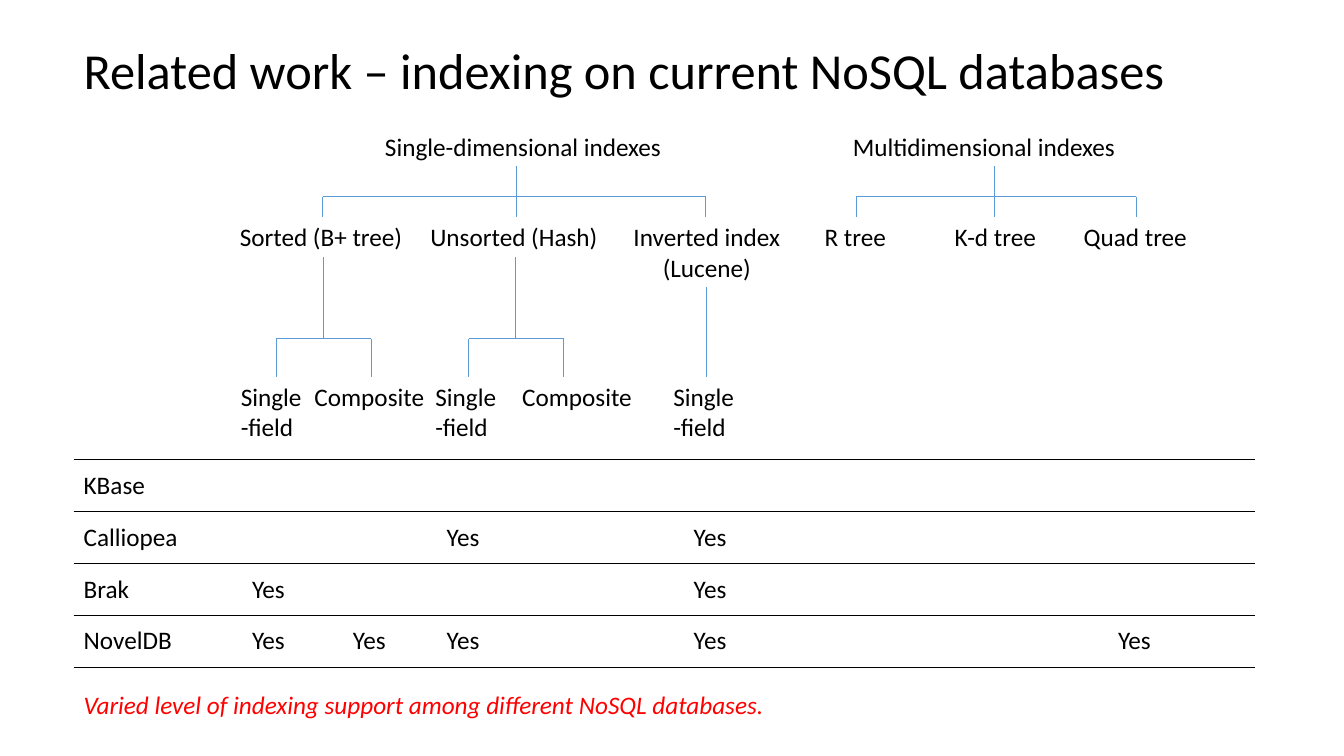
from lxml import etree
from pptx import Presentation
from pptx import util as u
from pptx.dml.color import RGBColor
from pptx.enum import shapes, text
from pptx.oxml import ns

BLACK = RGBColor(0, 0, 0)
BLUE = RGBColor(0x5B, 0x9B, 0xD5)
RED = RGBColor(0xFF, 0, 0)
STEP = u.Inches(0.1)
BODY = {"name": "Calibri", "size": u.Pt(18)}
HEAD = {"name": "Calibri", "size": u.Pt(36)}
NOTE = {**BODY, "italic": True}
LEFT, MID = text.PP_ALIGN.LEFT, text.PP_ALIGN.CENTER

ROOTS = [("Single-dimensional indexes", 37.2, 30.7),
         ("Multidimensional indexes", 83.6, 30.7)]
KINDS = [("Sorted (B+ tree)", 22.8, 18.3, 4), ("Unsorted (Hash)", 41.7, 19.3, 4),
         ("Inverted index\n(Lucene)", 61.5, 17.2, 7.1), ("R tree", 80.8, 8.8, 4),
         ("K-d tree", 93.7, 11.3, 4), ("Quad tree", 106.5, 12.9, 4)]
LEAVES = [("Single-field", 22.9, 8.6, 7.1), ("Composite", 30.2, 13.5, 4),
          ("Single-field", 42.2, 8.6, 7.1), ("Composite", 50.8, 13.5, 4),
          ("Single-field", 65.8, 8.6, 7.1)]
EDGES = [7.3, 24, 34, 43.3, 52, 67.8, 80.8, 93.7, 109.9, 124.5]
STORES = [("KBase", ()), ("Calliopea", (3, 5)), ("Brak", (1, 5)),
          ("NovelDB", (1, 2, 3, 5, 8))]


def grid(*steps):
    return [round(n * STEP) for n in steps]


def style(para, form, color=BLACK, align=LEFT):
    para.alignment = align
    for key, val in form.items():
        setattr(para.font, key, val)
    para.font.color.rgb = color


def label(slide, box, words, form=BODY, color=BLACK, align=LEFT):
    frame = slide.shapes.add_textbox(*grid(*box)).text_frame
    frame.word_wrap = True
    frame.auto_size = text.MSO_AUTO_SIZE.SHAPE_TO_FIT_TEXT
    frame.text = words
    for para in frame.paragraphs:
        style(para, form, color, align)


def rule(slide, x1, y1, x2, y2):
    line = slide.shapes.add_connector(shapes.MSO_CONNECTOR.STRAIGHT, *grid(x1, y1, x2, y2))
    line.line.color.rgb = BLUE
    line.line.width = u.Pt(0.5)
    etree.SubElement(line.element.spPr, ns.qn("a:effectLst"))


def fork(slide, box, stem, share, drops):
    x, y, w, h = box
    bar = y + h * share
    rule(slide, x + stem, y, x + stem, bar)
    rule(slide, x, bar, x + w, bar)
    for drop in drops:
        rule(slide, x + drop, bar, x + drop, y + h)


def title(slide, box):
    shape = slide.shapes.title
    shape.left, shape.top, shape.width, shape.height = grid(*box)
    frame = shape.text_frame
    frame.text = "Related work – indexing on current NoSQL databases"
    frame.vertical_anchor = text.MSO_ANCHOR.MIDDLE
    frame.paragraphs[0].line_spacing = 0.9
    style(frame.paragraphs[0], HEAD)


def tree(slide, top):
    for words, x, w in ROOTS:
        label(slide, (x, top, w, 4), words)
    for words, x, w, h in KINDS:
        align = MID if "\n" in words else LEFT
        label(slide, (x, top + 9, w, h), words, align=align)
    for words, x, w, h in LEAVES:
        label(slide, (x, top + 24.8, w, h), words)
    fork(slide, (32, top + 4, 38, 5), 19.2, 0.6, (0, 19.2, 38))
    fork(slide, (84.9, top + 4, 27.8, 5), 13.7, 0.6, (0, 13.7, 27.8))
    for x in (27.4, 46.5):
        fork(slide, (x, top + 13, 9.4, 11.9), 4.65, 0.68, (0, 9.4))
    rule(slide, 70.1, top + 16, 70.1, top + 24.9)


def border(cell):
    prop = cell._tc.get_or_add_tcPr()
    for at, side in enumerate(("lnL", "lnR", "lnT", "lnB")):
        line = etree.Element(ns.qn("a:" + side), w=str(u.Pt(0.5)))
        if at < 2:
            etree.SubElement(line, ns.qn("a:noFill"))
        else:
            fill = etree.SubElement(line, ns.qn("a:solidFill"))
            etree.SubElement(fill, ns.qn("a:srgbClr"), val=str(BLACK))
        prop.insert(at, line)


def matrix(slide, top, high):
    box = grid(EDGES[0], top, EDGES[-1] - EDGES[0], high)
    table = slide.shapes.add_table(len(STORES), len(EDGES) - 1, *box).table
    table.first_row = table.horz_banding = False
    for col, left, right in zip(table.columns, EDGES, EDGES[1:]):
        col.width = grid(right - left)[0]
    for r, (name, marks) in enumerate(STORES):
        for c, cell in enumerate(table.rows[r].cells):
            cell.text = name if c == 0 else "Yes" if c in marks else ""
            cell.vertical_anchor = text.MSO_ANCHOR.MIDDLE
            cell.fill.background()
            style(cell.text_frame.paragraphs[0], BODY)
            border(cell)


def main():
    deck = Presentation()
    deck.slide_width, deck.slide_height = u.Inches(13.33), u.Inches(7.5)
    slide = deck.slides.add_slide(deck.slide_layouts[5])
    title(slide, (7.3, 0, 126, 14.5))
    tree(slide, 12.5)
    matrix(slide, 45.6, 20.6)
    label(slide, (7.3, 67.9, 85.8, 4),
          "Varied level of indexing support among different NoSQL databases.", NOTE, RED)
    deck.save("out.pptx")


if __name__ == "__main__":
    main()
